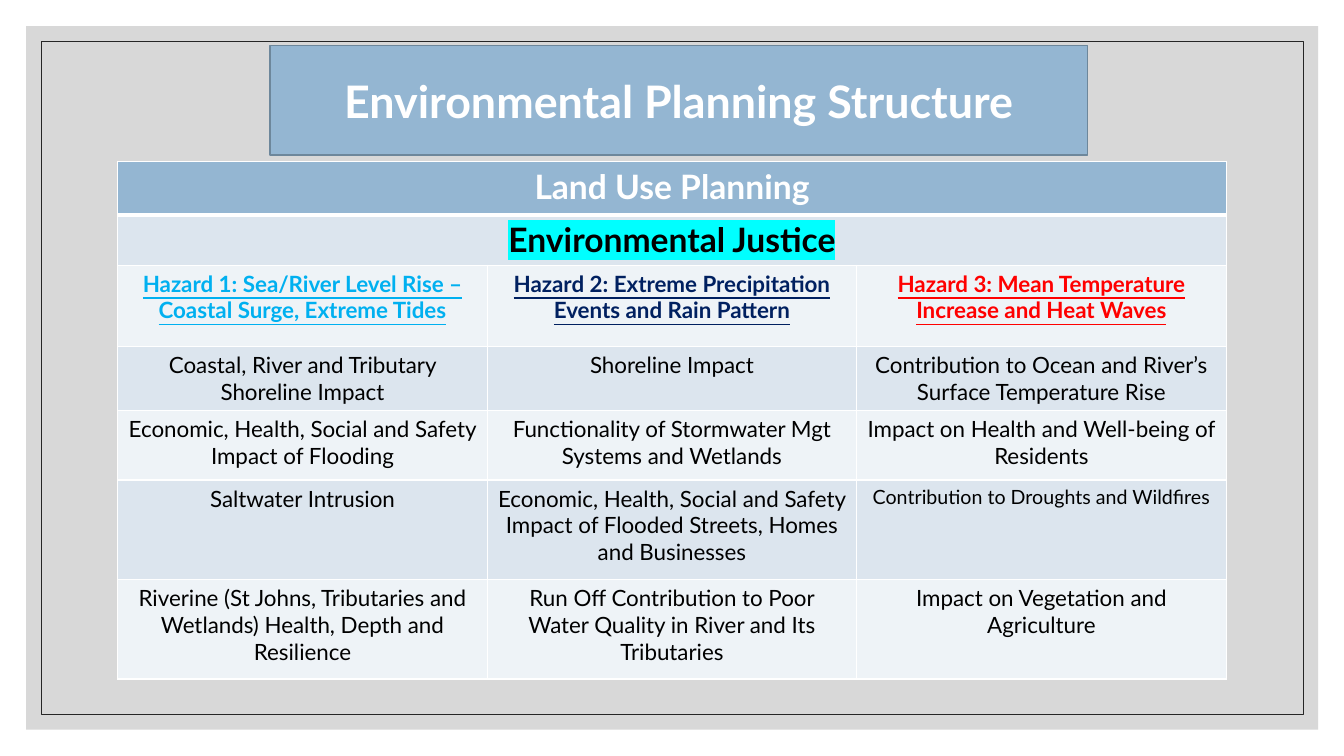
import pptx
import pptx.dml.color
import pptx.enum.shapes
import pptx.enum.text
import pptx.oxml.ns
import pptx.util
from lxml import etree

Cm = pptx.util.Cm
Pt = pptx.util.Pt
qn = pptx.oxml.ns.qn

COLORS = {
    "backdrop": "BFBFBF", "frame": "262626", "header": "94B6D2", "title_edge": "6D879B",
    "band_dark": "DCE5EE", "band_light": "EEF3F7", "white": "FFFFFF", "black": "000000",
    "marker": "00FFFF", "sea": "00B0F0", "rain": "002060", "heat": "FF0000",
}

HAZARDS = [
    ("Hazard 1: Sea/River Level Rise – Coastal Surge, Extreme Tides", "sea"),
    ("Hazard 2: Extreme Precipitation Events and Rain Pattern", "rain"),
    ("Hazard 3: Mean Temperature Increase and Heat Waves", "heat"),
]
IMPACTS = [
    ["Coastal, River and Tributary Shoreline Impact",
     "Shoreline Impact",
     "Contribution to Ocean and River’s Surface Temperature Rise"],
    ["Economic, Health, Social and Safety Impact of Flooding",
     "Functionality of Stormwater Mgt Systems and Wetlands",
     "Impact on Health and Well-being of Residents"],
    ["Saltwater Intrusion",
     "Economic, Health, Social and Safety Impact of Flooded Streets, Homes and Businesses",
     "Contribution to Droughts and Wildfires"],
    ["Riverine (St Johns, Tributaries and Wetlands) Health, Depth and Resilience",
     "Run Off Contribution to Poor Water Quality in River and Its Tributaries",
     "Impact on Vegetation and Agriculture"],
]
SMALL_PRINT = "Contribution to Droughts and Wildfires"
ROW_HEIGHTS = [1.35, 1.19, 2.06, 1.19, 1.75, 2.51, 2.51]
COLUMN_WIDTH = 9.31


def rgb(color):
    return pptx.dml.color.RGBColor.from_string(COLORS[color])


def add_color(parent, color):
    return etree.SubElement(parent, qn("a:srgbClr"), val=COLORS[color])


class PlanningSlide:
    font = "Lato"

    def __init__(self, presentation):
        self.slide = presentation.slides.add_slide(presentation.slide_layouts[6])

    def rectangle(self, left, top, width, height, fill=None, line=None, line_width=1, opacity=100):
        box = self.slide.shapes.add_shape(
            pptx.enum.shapes.MSO_SHAPE.RECTANGLE, Cm(left), Cm(top), Cm(width), Cm(height))
        box.shadow.inherit = False
        if fill:
            box.fill.solid()
            box.fill.fore_color.rgb = rgb(fill)
            if opacity < 100:
                tint = box._element.spPr.find(qn("a:solidFill")).find(qn("a:srgbClr"))
                etree.SubElement(tint, qn("a:alpha"), val=str(opacity * 1000))
        else:
            box.fill.background()
        if line:
            box.line.color.rgb = rgb(line)
            box.line.width = Pt(line_width)
        else:
            box.line.fill.background()
        return box

    def centred_text(self, frame, text, size, color, bold=False, underline=False, marker=None):
        """Put one centred run into the first paragraph of a text frame."""
        frame.word_wrap = True
        paragraph = frame.paragraphs[0]
        paragraph.alignment = pptx.enum.text.PP_ALIGN.CENTER
        run = paragraph.add_run()
        run.text = text
        run.font.size = Pt(size)
        run.font.bold = bold
        run.font.underline = underline
        run.font.color.rgb = rgb(color)
        run.font.name = self.font
        if marker:
            highlight = etree.Element(qn("a:highlight"))
            add_color(highlight, marker)
            run._r.get_or_add_rPr().find(qn("a:solidFill")).addnext(highlight)

    def table(self, left, top, column_widths, row_heights):
        grid = self.slide.shapes.add_table(
            len(row_heights), len(column_widths), Cm(left), Cm(top),
            Cm(sum(column_widths)), Cm(sum(row_heights))).table
        for column, width in zip(grid.columns, column_widths):
            column.width = Cm(width)
        for row, height in zip(grid.rows, row_heights):
            row.height = Cm(height)
        return grid

    def style_cell(self, cell, fill, top_border=1, bottom_border=1):
        cell.fill.solid()
        cell.fill.fore_color.rgb = rgb(fill)
        properties = cell._tc.get_or_add_tcPr()
        borders = {"L": 1, "R": 1, "T": top_border, "B": bottom_border}
        for position, (side, width) in enumerate(borders.items()):
            border = etree.Element(qn("a:ln" + side), w=str(Pt(width)))
            add_color(etree.SubElement(border, qn("a:solidFill")), "white")
            properties.insert(position, border)


def add_planning_table(page):
    grid = page.table(2.97, 4.06, [COLUMN_WIDTH] * 3, ROW_HEIGHTS)
    for index, row in enumerate(grid.rows):
        band = "header" if index == 0 else "band_dark" if index % 2 else "band_light"
        for cell in row.cells:
            page.style_cell(cell, band, top_border=3 if index == 1 else 1,
                            bottom_border=3 if index == 0 else 1)
    for index in (0, 1):
        grid.cell(index, 0).merge(grid.cell(index, 2))
    page.centred_text(grid.cell(0, 0).text_frame, "Land Use Planning", 24, "white", bold=True)
    page.centred_text(grid.cell(1, 0).text_frame, "Environmental Justice", 24, "black",
                      bold=True, marker="marker")
    for column, (hazard, color) in enumerate(HAZARDS):
        page.centred_text(grid.cell(2, column).text_frame, hazard, 16, color,
                          bold=True, underline=True)
    for row, impacts in enumerate(IMPACTS, start=3):
        for column, impact in enumerate(impacts):
            size = 14 if impact == SMALL_PRINT else 16
            page.centred_text(grid.cell(row, column).text_frame, impact, size, "black")


def main():
    presentation = pptx.Presentation()
    presentation.slide_width = Cm(33.87)
    presentation.slide_height = Cm(19.05)
    page = PlanningSlide(presentation)
    page.rectangle(0.66, 0.66, 32.56, 17.73, fill="backdrop", opacity=60)
    page.rectangle(1.04, 1.04, 31.8, 16.97, line="frame", line_width=0.5)
    add_planning_table(page)
    title = page.rectangle(6.81, 1.14, 20.6, 2.77, fill="header", line="title_edge")
    title.text_frame.vertical_anchor = pptx.enum.text.MSO_ANCHOR.MIDDLE
    page.centred_text(title.text_frame, "Environmental Planning Structure", 32, "white", bold=True)
    presentation.save("out.pptx")


if __name__ == "__main__":
    main()
